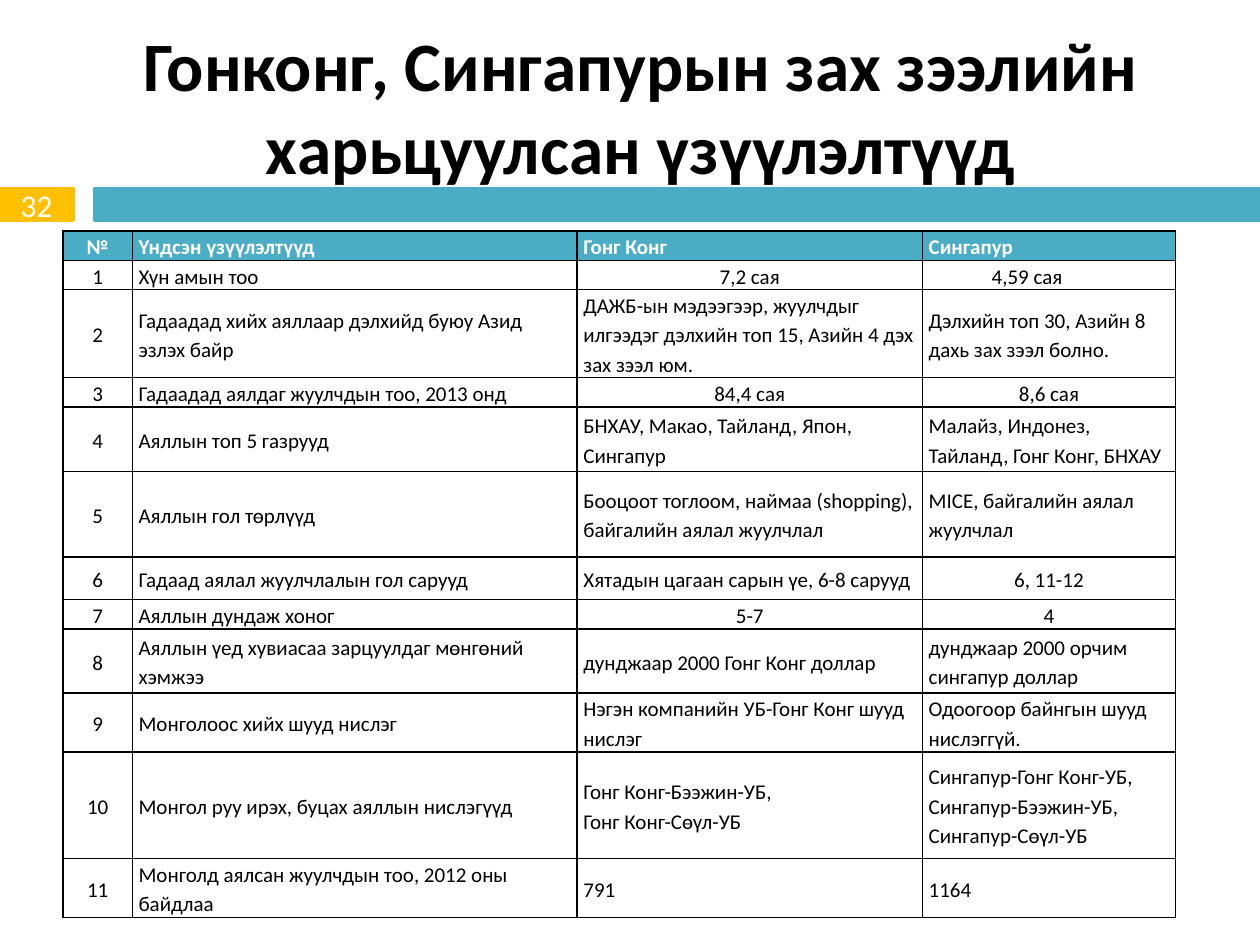
from lxml.etree import SubElement
from pptx import Presentation
from pptx.dml.color import RGBColor
from pptx.enum.shapes import MSO_SHAPE
from pptx.enum.text import MSO_ANCHOR, PP_ALIGN
from pptx.oxml.ns import qn
from pptx.util import Pt

BLACK, WHITE, TEAL, AMBER = "000000", "FFFFFF", "4BACC6", "FFC000"


def color(value):
    return RGBColor.from_string(value)


def format_text(frame, size, text_color, bold=False, alignment=PP_ALIGN.LEFT, spacing=None):
    for paragraph in frame.paragraphs:
        paragraph.alignment = alignment
        paragraph.line_spacing = spacing
        for run in paragraph.runs:
            run.font.name = "Calibri"
            run.font.size = Pt(size)
            run.font.bold = bold
            run.font.color.rgb = color(text_color)


presentation = Presentation()
presentation.slide_width, presentation.slide_height = Pt(720), Pt(540)
slide = presentation.slides.add_slide(presentation.slide_layouts[6])

# Title
title = slide.shapes.add_textbox(Pt(42), Pt(15), Pt(648), Pt(90))
title.text_frame.word_wrap = True
title.text_frame.vertical_anchor = MSO_ANCHOR.MIDDLE
title.text_frame.text = "Гонконг, Сингапурын зах зээлийн харьцуулсан үзүүлэлтүүд"
format_text(title.text_frame, 39.6, BLACK, bold=True, alignment=PP_ALIGN.CENTER)

# Divider bar and page number
for left, width, fill, text in [(54, 666, TEAL, ""), (0, 42, AMBER, "32")]:
    bar = slide.shapes.add_shape(MSO_SHAPE.RECTANGLE, Pt(left), Pt(108), Pt(width), Pt(18))
    bar.shadow.inherit = False
    bar.fill.solid()
    bar.fill.fore_color.rgb = color(fill)
    bar.line.color.rgb = color(fill)
    bar.line.width = Pt(2)
    if text:
        frame = bar.text_frame
        frame.margin_left = frame.margin_right = frame.margin_top = frame.margin_bottom = 0
        frame.vertical_anchor = MSO_ANCHOR.MIDDLE
        frame.text = text
        format_text(frame, 18, WHITE, alignment=PP_ALIGN.CENTER)

# Comparison table
rows = [
    ("№", "Үндсэн үзүүлэлтүүд", "Гонг Конг", "Сингапур"),
    ("1", "Хүн амын тоо", "7,2 сая", "4,59 сая"),
    ("2", "Гадаадад хийх аяллаар дэлхийд буюу Азид эзлэх байр",
     "ДАЖБ-ын мэдээгээр, жуулчдыг илгээдэг дэлхийн топ 15, Азийн 4 дэх зах зээл юм.",
     "Дэлхийн топ 30, Азийн 8 дахь зах зээл болно."),
    ("3", "Гадаадад аялдаг жуулчдын тоо, 2013 онд", "84,4 сая", "8,6 сая"),
    ("4", "Аяллын топ 5 газрууд", "БНХАУ, Макао, Тайланд, Япон, Сингапур",
     "Малайз, Индонез, Тайланд, Гонг Конг, БНХАУ"),
    ("5", "Аяллын гол төрлүүд", "Бооцоот тоглоом, наймаа (shopping), байгалийн аялал жуулчлал",
     "MICE, байгалийн аялал жуулчлал"),
    ("6", "Гадаад аялал жуулчлалын гол сарууд", "Хятадын цагаан сарын үе, 6-8 сарууд",
     "6, 11-12"),
    ("7", "Аяллын дундаж хоног", "5-7", "4"),
    ("8", "Аяллын үед хувиасаа зарцуулдаг мөнгөний хэмжээ", "дунджаар 2000 Гонг Конг доллар",
     "дунджаар 2000 орчим сингапур доллар"),
    ("9", "Монголоос хийх шууд нислэг", "Нэгэн компанийн УБ-Гонг Конг шууд нислэг",
     "Одоогоор байнгын шууд нислэггүй."),
    ("10", "Монгол руу ирэх, буцах аяллын нислэгүүд", "Гонг Конг-Бээжин-УБ,\nГонг Конг-Сөүл-УБ",
     "Сингапур-Гонг Конг-УБ,\nСингапур-Бээжин-УБ,\nСингапур-Сөүл-УБ"),
    ("11", "Монголд аялсан жуулчдын тоо, 2012 оны байдлаа", "791", "1164"),
]
column_widths = [39.6, 254.2, 197.3, 144.7]
row_heights = [16.8, 16.8, 50.3, 16.8, 36.8, 48.8, 24.4, 16.8, 36.7, 33.6, 61, 33.6]
centered_cells = {(1, 2), (3, 2), (3, 3), (6, 3), (7, 2), (7, 3)}
indented_cell = (1, 3)

table = slide.shapes.add_table(len(rows), len(column_widths), Pt(36), Pt(132),
                               Pt(sum(column_widths)), Pt(sum(row_heights))).table
table.first_row = table.horz_banding = False
for column, width in zip(table.columns, column_widths):
    column.width = Pt(width)

for row_index, (texts, height) in enumerate(zip(rows, row_heights)):
    table.rows[row_index].height = Pt(height)
    is_header = row_index == 0
    for column_index, text in enumerate(texts):
        position = (row_index, column_index)
        cell = table.cell(*position)
        cell.margin_left = cell.margin_right = Pt(3.6)
        cell.margin_top = cell.margin_bottom = 0
        cell.vertical_anchor = MSO_ANCHOR.MIDDLE
        cell.text_frame.text = text

        if column_index == 0 or position in centered_cells:
            alignment = PP_ALIGN.CENTER
        else:
            alignment = PP_ALIGN.JUSTIFY if is_header else PP_ALIGN.LEFT
        format_text(cell.text_frame, 12, WHITE if is_header else BLACK, is_header, alignment, 1.15)
        if position == indented_cell:
            cell.text_frame.paragraphs[0]._p.get_or_add_pPr().set("indent", str(Pt(36)))

        properties = cell._tc.get_or_add_tcPr()
        for side in ("a:lnL", "a:lnR", "a:lnT", "a:lnB"):
            border = SubElement(properties, qn(side), w=str(Pt(1)))
            SubElement(SubElement(border, qn("a:solidFill")), qn("a:srgbClr"), val=BLACK)
        if is_header:
            cell.fill.solid()
            cell.fill.fore_color.rgb = color(TEAL)
        else:
            cell.fill.background()

presentation.save("out.pptx")
